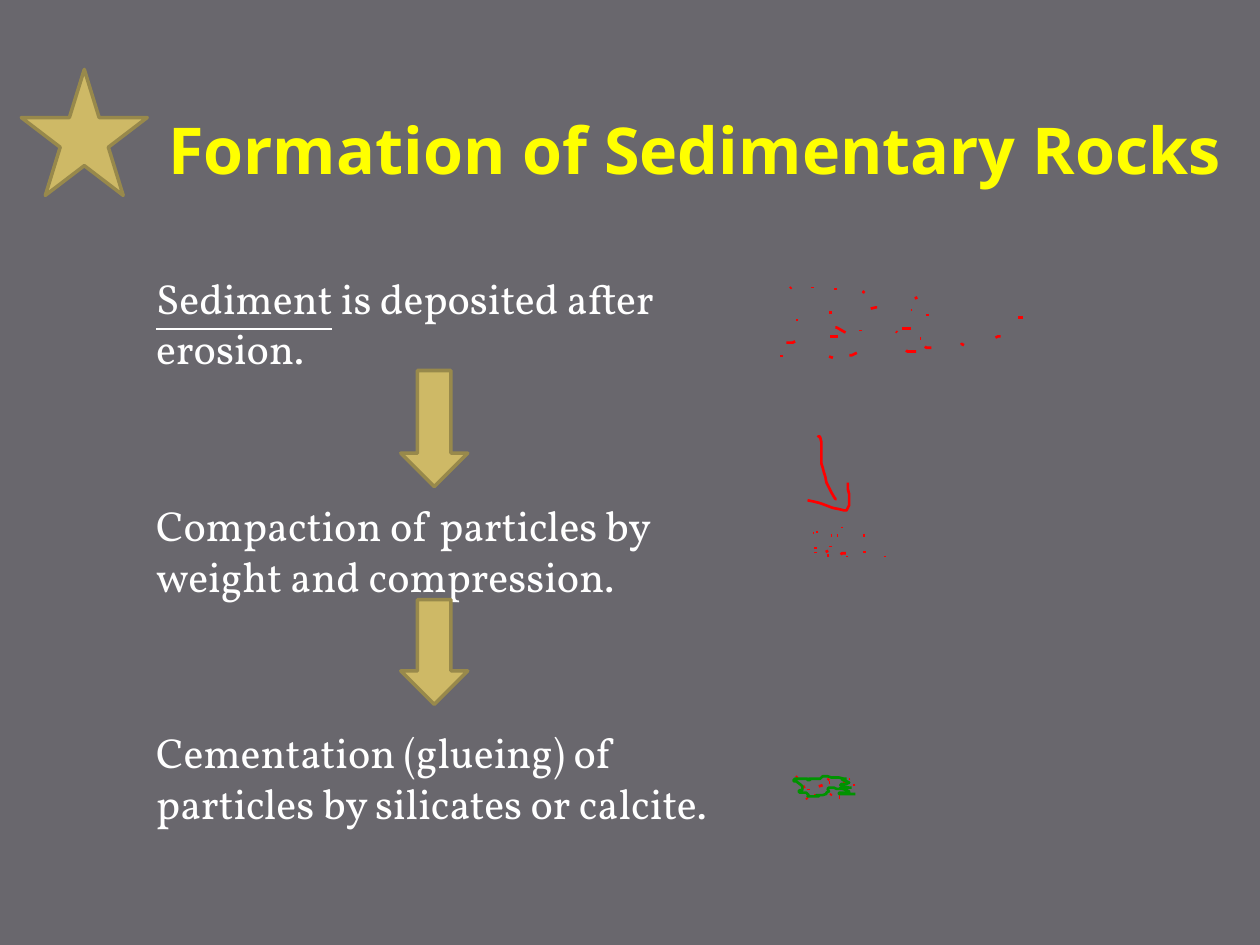
from dataclasses import dataclass

from pptx import Presentation
from pptx.dml.color import RGBColor
from pptx.enum.shapes import MSO_SHAPE as Preset
from pptx.enum.text import MSO_ANCHOR as Anchor, MSO_AUTO_SIZE as AutoSize, PP_ALIGN as Align
from pptx.util import Cm, Pt


@dataclass(frozen=True)
class Theme:
    background: RGBColor = RGBColor(0x69, 0x67, 0x6D)
    title: RGBColor = RGBColor(0xFF, 0xFF, 0x00)
    text: RGBColor = RGBColor(0xFF, 0xFF, 0xFF)
    gold: RGBColor = RGBColor(0xCE, 0xB9, 0x66)
    gold_edge: RGBColor = RGBColor(0x98, 0x89, 0x4B)
    red_ink: RGBColor = RGBColor(0xFF, 0x00, 0x00)
    green_ink: RGBColor = RGBColor(0x00, 0x93, 0x00)
    title_font: str = "Noto Sans"
    text_font: str = "Vollkorn"
    title_size: float = 36.9
    text_size: float = 24
    line_pitch: float = 28.8
    step_gap: float = 72.3
    edge_width: float = 2
    ink_width: float = 1.5


THEME = Theme()
INK_UNITS_PER_CM = 100 / 2.54

# Each step is a list of (text, underlined) runs.
STEPS = [
    [("Sediment", True), (" is deposited after erosion.", False)],
    [("Compaction of particles by weight and compression.", False)],
    [("Cementation (glueing) of particles by silicates or calcite.", False)],
]

# Pen strokes: points in ink units from the corner of their sketch.
LOOSE_GRAINS = [
    [(104, 18), (103, 18)], [(40, 20), (38, 20)], [(63, 34), (63, 35)],
    [(110, 41), (111, 41)], [(117, 22), (115, 22)], [(11, 43), (9, 44), (4, 44)],
    [(0, 54), (0, 55)], [(54, 54), (56, 54), (58, 53), (60, 52)],
    [(114, 47), (115, 48), (119, 48)], [(170, 40), (172, 39), (174, 39)],
    [(192, 24), (188, 24)], [(8, 0), (7, 1)], [(25, 0), (25, 1)], [(43, 1), (43, 2)],
    [(66, 3), (65, 4), (66, 4)], [(108, 8), (106, 9)], [(76, 16), (75, 16), (71, 17)],
    [(13, 26), (12, 26)], [(43, 32), (44, 32), (51, 36)], [(91, 35), (92, 36)],
    [(103, 33), (96, 33)], [(45, 39), (39, 39)], [(38, 55), (41, 56)],
    [(99, 50), (100, 51), (107, 51)], [(144, 45), (143, 45), (145, 46)],
]
PEN_ARROW = [
    [(8, 1), (9, 0), (10, 1), (11, 5), (11, 18), (11, 22), (12, 25), (13, 29),
     (14, 32), (15, 37), (17, 41), (19, 45), (22, 50), (23, 50)],
    [(32, 37), (32, 42), (33, 46), (33, 55), (32, 57), (31, 59), (29, 59),
     (25, 58), (20, 57), (12, 54), (9, 53), (5, 52), (0, 51)],
]
COMPACTED_GRAINS = [
    [(23, 0), (23, 1)], [(4, 4), (2, 4)], [(0, 5), (1, 5)], [(15, 7), (14, 7)],
    [(41, 7), (40, 7)], [(14, 15), (14, 16)], [(12, 19), (10, 20)], [(2, 20), (2, 21)],
    [(27, 23), (27, 24)], [(57, 23), (57, 24)], [(42, 20), (40, 20)],
    [(26, 21), (23, 21), (22, 22)], [(13, 23), (11, 23)], [(20, 7), (19, 7)],
    [(2, 16), (2, 18)],
]
CEMENTED_GRAINS = [
    [(37, 16), (36, 16)], [(36, 17), (37, 17)], [(18, 15), (16, 15)], [(30, 14), (29, 15)],
    [(9, 8), (7, 9)], [(23, 7), (20, 8)], [(41, 5), (39, 5)], [(45, 2), (44, 2)],
    [(40, 3), (40, 2)], [(29, 5), (28, 5)], [(3, 0), (2, 1)], [(11, 18), (10, 17)],
    [(49, 7), (47, 7)], [(28, 2), (27, 3)], [(12, 10), (12, 11)],
]
CEMENT = [
    [(42, 2), (40, 2), (36, 1), (30, 1), (27, 0), (23, 0), (21, 2), (12, 2), (11, 3),
     (13, 3), (11, 2), (1, 2), (0, 3), (0, 4), (2, 4), (6, 7), (7, 8), (7, 11), (5, 11),
     (4, 12), (5, 13), (10, 13), (12, 15), (11, 16), (20, 16), (20, 15), (18, 15),
     (23, 15), (26, 14), (26, 13), (28, 12), (27, 10), (28, 9), (32, 9), (34, 10),
     (42, 10), (43, 9)],
    [(46, 9), (44, 9), (39, 8), (37, 7), (38, 6), (42, 6), (44, 5), (42, 4), (39, 3),
     (38, 2)],
    [(49, 14), (36, 14), (36, 13), (44, 13), (44, 12), (42, 11), (39, 10), (37, 9),
     (38, 9)],
]


def style_run(run, font_name, size, color):
    run.font.name = font_name
    run.font.size = Pt(size)
    run.font.color.rgb = color


def place_title(slide, left, top, width, height):
    title = slide.shapes.title
    title.left, title.top, title.width, title.height = left, top, width, height
    frame = title.text_frame
    frame.auto_size = AutoSize.NONE
    frame.vertical_anchor = Anchor.MIDDLE
    paragraph = frame.paragraphs[0]
    paragraph.alignment = Align.CENTER
    run = paragraph.add_run()
    run.text = "Formation of Sedimentary Rocks"
    style_run(run, THEME.title_font, THEME.title_size, THEME.title)
    run.font.bold = True


def add_gold_shape(slide, preset, left, top, width, height):
    shape = slide.shapes.add_shape(preset, left, top, width, height)
    shape.shadow.inherit = False
    shape.fill.solid()
    shape.fill.fore_color.rgb = THEME.gold
    shape.line.color.rgb = THEME.gold_edge
    shape.line.width = Pt(THEME.edge_width)


def add_steps(slide, left, top, width, height):
    """Write the three steps, with a block arrow in each gap between them."""
    frame = slide.shapes.add_textbox(left, top, width, height).text_frame
    frame.word_wrap = True
    frame.margin_top = 0
    for index, step in enumerate(STEPS):
        paragraph = frame.paragraphs[0] if index == 0 else frame.add_paragraph()
        paragraph.line_spacing = Pt(THEME.line_pitch)
        paragraph.space_before = Pt(THEME.step_gap if index else 0)
        for text, underlined in step:
            run = paragraph.add_run()
            run.text = text
            style_run(run, THEME.text_font, THEME.text_size, THEME.text)
            run.font.underline = underlined
    for offset, length in ((Cm(1.98), Cm(2.34)), (Cm(6.6), Cm(2.11))):
        add_gold_shape(slide, Preset.DOWN_ARROW, left + Cm(5.18), top + offset,
                       Cm(1.35), length)


def add_sketch(slide, left, top, strokes, color):
    group = slide.shapes.add_group_shape()
    for start, *points in strokes:
        builder = group.shapes.build_freeform(*start, scale=Cm(1) / INK_UNITS_PER_CM)
        builder.add_line_segments(points, close=False)
        shape = builder.convert_to_shape(left, top)
        shape.shadow.inherit = False
        shape.fill.background()
        shape.line.color.rgb = color
        shape.line.width = Pt(THEME.ink_width)


def add_sketches(slide, left, top):
    """Draw the pen sketches in a column beside the steps."""
    for x, y, strokes, color in (
        (0, 0, LOOSE_GRAINS, THEME.red_ink),
        (0.53, 3, PEN_ARROW, THEME.red_ink),
        (0.64, 4.83, COMPACTED_GRAINS, THEME.red_ink),
        (0.25, 9.86, CEMENTED_GRAINS, THEME.red_ink),
        (0.25, 9.86, CEMENT, THEME.green_ink),
    ):
        add_sketch(slide, left + Cm(x), top + Cm(y), strokes, color)


def main():
    presentation = Presentation()
    presentation.slide_width, presentation.slide_height = Cm(25.4), Cm(19.05)
    slide = presentation.slides.add_slide(presentation.slide_layouts[5])
    slide.background.fill.solid()
    slide.background.fill.fore_color.rgb = THEME.background
    place_title(slide, Cm(2.62), Cm(1.4), Cm(22.78), Cm(3.18))
    add_steps(slide, Cm(2.9), Cm(5.49), Cm(12.14), Cm(12))
    add_gold_shape(slide, Preset.STAR_5_POINT, Cm(0.43), Cm(1.4), Cm(2.54), Cm(2.54))
    add_sketches(slide, Cm(15.75), Cm(5.79))
    presentation.save("out.pptx")


if __name__ == "__main__":
    main()
